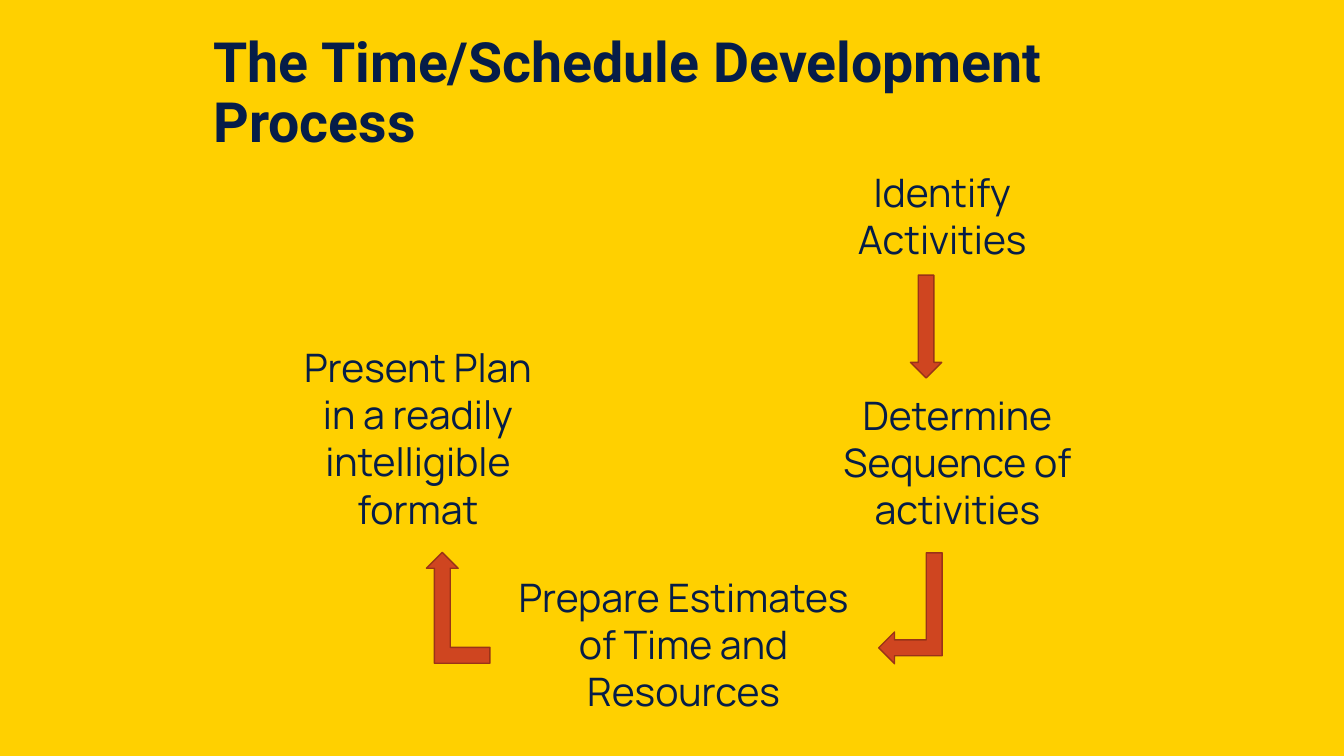
from dataclasses import dataclass

from pptx import Presentation
from pptx.dml.color import RGBColor as RGB
from pptx.enum.shapes import MSO_SHAPE as Shape
from pptx.enum.text import MSO_ANCHOR as Anchor, PP_ALIGN as Align
from pptx.util import Inches, Pt


@dataclass(frozen=True)
class Theme:
    """Colours, fonts and type sizes."""
    back: RGB = RGB.from_string("FFD000")
    ink: RGB = RGB.from_string("061D48")
    fill: RGB = RGB.from_string("CF4520")
    edge: RGB = RGB.from_string("993318")
    head: str = "Roboto"
    body: str = "Manrope"
    large: float = 39.6
    small: float = 28


THEME = Theme()
STEPS = [
    ("Identify Activities", (7.93, 1.62, 2.83, 1.04)),
    ("Determine Sequence of activities", (8.08, 3.83, 2.83, 1.51)),
    ("Prepare Estimates of Time and Resources", (5.01, 5.64, 3.54, 1.51)),
    ("Present Plan in a readily intelligible format", (2.73, 3.36, 2.83, 1.99)),
]
ARROWS = [
    (Shape.DOWN_ARROW, (9.03, 2.73, 0.31, 1.02), 0, False),
    (Shape.BENT_UP_ARROW, (8.48, 5.72, 1.1, 0.63), 270, True),
    (Shape.BENT_UP_ARROW, (4.23, 5.48, 0.63, 1.1), 0, True),
]


def add_text(slide, box, text, font, size):
    """Add a wrapped text box and return its frame and paragraph."""
    frame = slide.shapes.add_textbox(*map(Inches, box)).text_frame
    frame.word_wrap = True
    para = frame.paragraphs[0]
    para.text = text
    para.font.name = font
    para.font.size = Pt(size)
    para.font.color.rgb = THEME.ink
    return frame, para


def add_title(slide, box, text):
    """Add the bold heading, centred in the height of its box."""
    frame, para = add_text(slide, box, text, THEME.head, THEME.large)
    frame.vertical_anchor = Anchor.MIDDLE
    para.line_spacing = 0.9
    para.font.bold = True


def add_step(slide, box, text):
    """Add one centred step of the process."""
    para = add_text(slide, box, text, THEME.body, THEME.small)[1]
    para.alignment = Align.CENTER


def add_arrow(slide, box, kind, turn, flip):
    """Add a block arrow, turned and mirrored as asked."""
    arrow = slide.shapes.add_shape(kind, *map(Inches, box))
    arrow.shadow.inherit = False
    arrow.fill.solid()
    arrow.fill.fore_color.rgb = THEME.fill
    arrow.line.color.rgb = THEME.edge
    arrow.line.width = Pt(1)
    arrow.rotation = turn
    if flip:
        arrow.element.spPr.xfrm.set("flipH", "1")


def main():
    """Build the slide and save it."""
    deck = Presentation()
    deck.slide_width, deck.slide_height = Inches(13.33), Inches(7.5)
    slide = deck.slides.add_slide(deck.slide_layouts[6])
    slide.background.fill.solid()
    slide.background.fill.fore_color.rgb = THEME.back
    add_title(slide, (2.02, 0.35, 9.82, 1.17), "The Time/Schedule Development Process")
    for text, box in STEPS:
        add_step(slide, box, text)
    for kind, box, turn, flip in ARROWS:
        add_arrow(slide, box, kind, turn, flip)
    deck.save("out.pptx")


if __name__ == "__main__":
    main()
